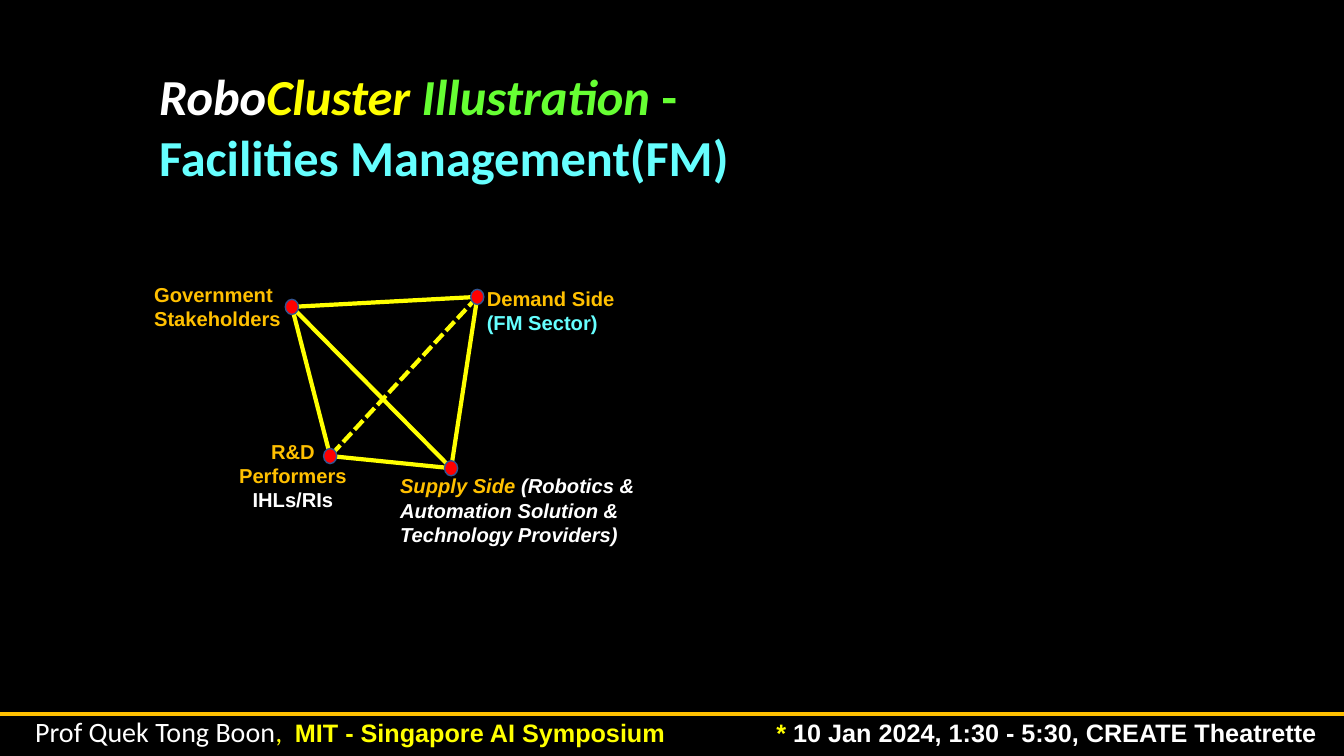
from collections import namedtuple

from lxml.etree import SubElement
from pptx import Presentation
from pptx.dml.color import RGBColor
from pptx.enum.dml import MSO_LINE
from pptx.enum.shapes import MSO_CONNECTOR, MSO_SHAPE
from pptx.enum.text import PP_ALIGN
from pptx.oxml.ns import qn
from pptx.util import Inches, Pt

Box = namedtuple("Box", "left top width height")

WHITE, YELLOW, AMBER = "FFFFFF", "FFFF00", "FFC000"
CYAN, GREEN, RED, NAVY = "66FFFF", "66FF33", "FF0000", "325491"


def color(hex_value):
    return RGBColor.from_string(hex_value)


def point(box, across, down):
    return (int(box.left + box.width * across / 100),
            int(box.top + box.height * down / 100))


def part(box, across, down, width, height):
    left, top = point(box, across, down)
    return Box(left, top, int(box.width * width / 100), int(box.height * height / 100))


def add_text(slide, box, paragraphs, size, name, align=PP_ALIGN.LEFT):
    text_frame = slide.shapes.add_textbox(*box).text_frame
    text_frame.word_wrap = True
    for index, pieces in enumerate(paragraphs):
        paragraph = text_frame.add_paragraph() if index else text_frame.paragraphs[0]
        paragraph.alignment = align
        for text, hex_value, italic in pieces:
            run = paragraph.add_run()
            run.text = text
            run.font.name = name
            run.font.size = Pt(size)
            run.font.bold = True
            run.font.italic = italic
            run.font.color.rgb = color(hex_value)
    return text_frame


def add_line(slide, start, end, hex_value, dash=None):
    connector = slide.shapes.add_connector(MSO_CONNECTOR.STRAIGHT, *start, *end)
    connector.line.color.rgb = color(hex_value)
    connector.line.width = Pt(3)
    if dash:
        connector.line.dash_style = dash
    SubElement(connector._element.spPr, qn("a:effectLst"))


def add_title(slide, box):
    add_text(slide, box, [[
        ("Robo", WHITE, True),
        ("Cluster", YELLOW, True),
        (" Illustration ", GREEN, True),
        ("- ", GREEN, False),
        ("Facilities Management(FM)", CYAN, False),
    ]], 36, "Calibri")


def add_cluster(slide, box):
    nodes = {
        "government": point(box, 29.3, 10.7),
        "demand": point(box, 66.1, 7.1),
        "research": point(box, 36.9, 64.5),
        "supply": point(box, 60.9, 68.9),
    }
    links = [
        ("demand", "government", None),
        ("government", "supply", None),
        ("demand", "supply", None),
        ("government", "research", None),
        ("supply", "research", None),
        ("demand", "research", MSO_LINE.SQUARE_DOT),
    ]
    for start, end, dash in links:
        add_line(slide, nodes[start], nodes[end], YELLOW, dash)

    labels = [
        ((0, 0, 31.6, 21.5), PP_ALIGN.LEFT,
         [[("Government Stakeholders", AMBER, False)]]),
        ((66, 1.5, 32, 21.5), PP_ALIGN.LEFT,
         [[("Demand Side", AMBER, False)], [("(FM Sector)", CYAN, False)]]),
        ((48.8, 69.1, 51.2, 30.2), PP_ALIGN.LEFT,
         [[("Supply Side ", AMBER, True),
           ("(Robotics & Automation Solution & Technology Providers)", WHITE, True)]]),
        ((16.8, 56.7, 25.4, 30.2), PP_ALIGN.CENTER,
         [[("R&D Performers ", AMBER, False), ("IHLs/RIs", WHITE, False)]]),
    ]
    for place, align, paragraphs in labels:
        add_text(slide, part(box, *place), paragraphs, 14.4, "Arial", align)

    width, height = Inches(0.13), Inches(0.15)
    for across, down in nodes.values():
        dot = slide.shapes.add_shape(
            MSO_SHAPE.OVAL, across - width // 2, down - height // 2, width, height)
        dot.shadow.inherit = False
        dot.fill.solid()
        dot.fill.fore_color.rgb = color(RED)
        dot.line.color.rgb = color(NAVY)
        dot.line.width = Pt(1)


def add_footer(slide, box):
    text_frame = add_text(slide, part(box, 1.88, 0, 97.1, 100), [[
        ("Prof Quek Tong Boon", WHITE, False),
        (",  ", YELLOW, False),
        ("MIT - Singapore AI Symposium\t* ", YELLOW, False),
        ("10 Jan 2024, 1:30 - 5:30, CREATE Theatrette", WHITE, False),
    ]], 18, "Arial")
    paragraph = text_frame.paragraphs[0]
    for run in paragraph.runs[:2]:
        run.font.name = "Calibri"
        run.font.size = Pt(20)
        run.font.bold = False
    tabs = SubElement(paragraph._p.get_or_add_pPr(), qn("a:tabLst"))
    SubElement(tabs, qn("a:tab"), pos=str(Inches(12.71)), algn="r")
    add_line(slide, point(box, 0, 9), point(box, 100, 9), AMBER)


def main():
    presentation = Presentation()
    presentation.slide_width = Inches(13.33)
    presentation.slide_height = Inches(7.5)
    slide = presentation.slides.add_slide(presentation.slide_layouts[6])
    slide.background.fill.solid()
    slide.background.fill.fore_color.rgb = color("000000")
    page = Box(0, 0, presentation.slide_width, presentation.slide_height)
    add_footer(slide, part(page, 0, 93.87, 100, 5.87))
    add_cluster(slide, part(page, 10.73, 36.67, 37.5, 36.67))
    add_title(slide, part(page, 11.1, 8, 44.94, 17.47))
    presentation.save("out.pptx")


if __name__ == "__main__":
    main()
